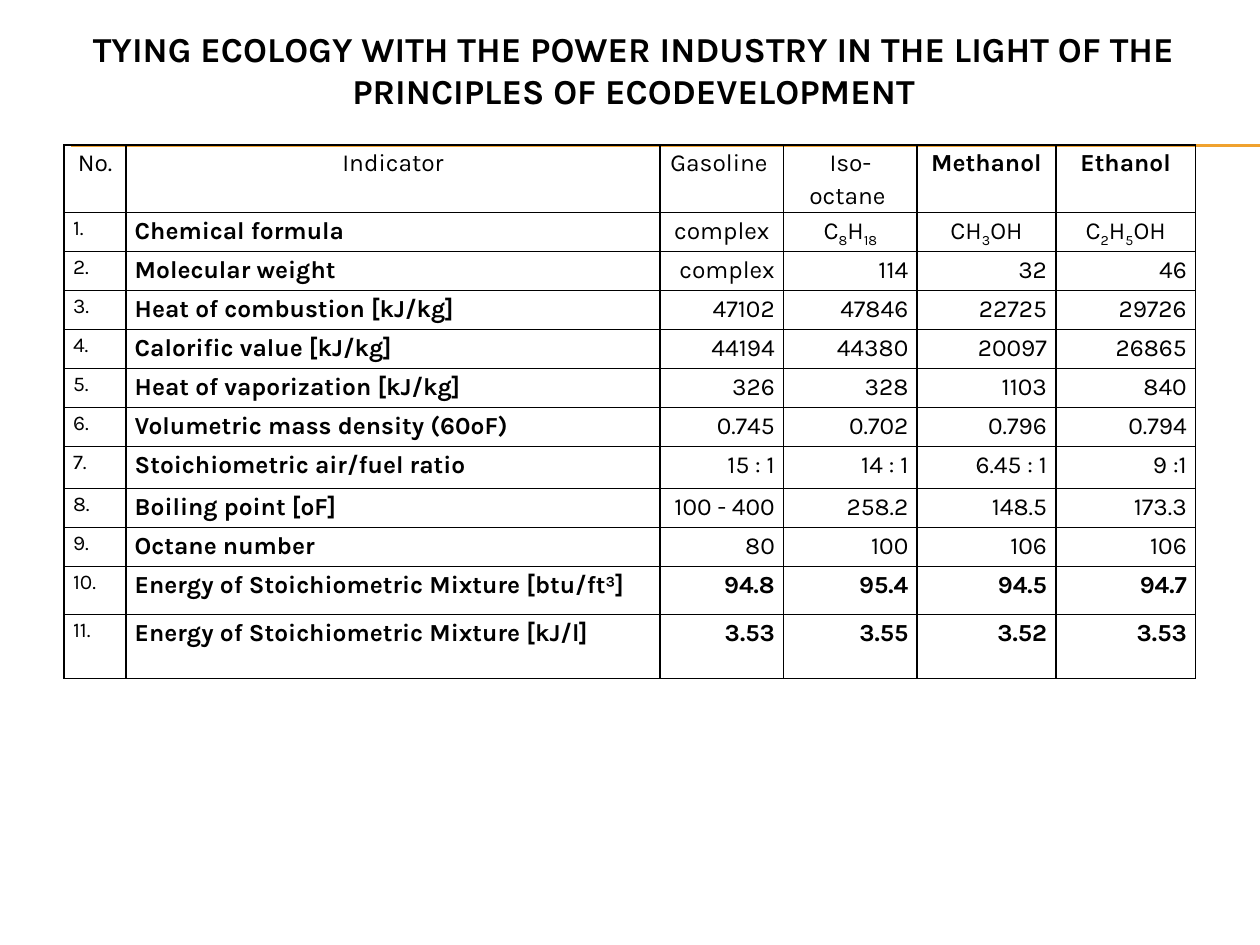
from dataclasses import dataclass
from itertools import groupby

from lxml.etree import SubElement
from pptx import Presentation
from pptx.dml.color import RGBColor
from pptx.enum.shapes import MSO_CONNECTOR
from pptx.enum.text import MSO_ANCHOR, PP_ALIGN as Align
from pptx.oxml import parse_xml
from pptx.oxml.ns import nsdecls, qn
from pptx.util import Inches, Pt


@dataclass(frozen=True)
class Theme:
    font: str = "Karla"
    ink: str = "000000"
    accent: str = "F0A22E"
    title_size: int = 20
    body_size: int = 14
    number_size: int = 12
    border: int = 1
    rule: float = 0.75
    spacing: float = 1.15


THEME = Theme()

# Content
TITLE = ("TYING ECOLOGY WITH THE POWER INDUSTRY IN THE LIGHT OF THE "
         "PRINCIPLES OF ECODEVELOPMENT")
HEADINGS = ["No.", "Indicator", "Gasoline ", "Iso-octane ", "Methanol", "Ethanol"]
INDICATORS = [
    ("Chemical formula", "complex", "C8H18", "CH3OH", "C2H5OH"),
    ("Molecular weight", "complex", "114", "32", "46"),
    ("Heat of combustion [kJ/kg]", "47102", "47846", "22725", "29726"),
    ("Calorific value [kJ/kg]", "44194", "44380", "20097", "26865"),
    ("Heat of vaporization [kJ/kg]", "326", "328", "1103", "840"),
    ("Volumetric mass density (60ºF)", "0.745", "0.702", "0.796", "0.794"),
    ("Stoichiometric air/fuel ratio", "15 : 1", "14 : 1", "6.45 : 1", "9 :1"),
    ("Boiling point [ºF]", "100 - 400", "258.2", "148.5", "173.3"),
    ("Octane number", "80", "100", "106", "106"),
    ("Energy of Stoichiometric Mixture [btu/ft³]", "94.8", "95.4", "94.5", "94.7"),
    ("Energy of Stoichiometric Mixture [kJ/l]", "3.53", "3.55", "3.52", "3.53"),
]
ALCOHOLS = {"Methanol", "Ethanol"}
FORMULA_ROW = 1
ENERGY_ROWS = {10, 11}

# Layout
COLUMN_WIDTHS = [0.49, 4.24, 0.98, 1.06, 1.1, 1.11]
ROW_HEIGHT = 0.31
ROW_HEIGHTS = {0: 0.32, 7: 0.33, 10: 0.38, 11: 0.51}
TABLE_LEFT, TABLE_TOP = 0.51, 1.15


def style_run(run, size, bold):
    font = run.font
    font.name, font.size, font.bold = THEME.font, Pt(size), bold
    font.color.rgb = RGBColor.from_string(THEME.ink)


def add_rule(slide, y):
    rule = slide.shapes.add_connector(
        MSO_CONNECTOR.STRAIGHT, Inches(0.56), Inches(y), Inches(10), Inches(y))
    rule.line.color.rgb = RGBColor.from_string(THEME.accent)
    rule.line.width = Pt(THEME.rule)
    SubElement(rule._element.spPr, qn("a:effectLst"))


def add_title(slide):
    box = slide.shapes.add_textbox(Inches(0.28), Inches(0.13), Inches(9.5), Inches(0.84))
    frame = box.text_frame
    frame.word_wrap = True
    frame.vertical_anchor = MSO_ANCHOR.MIDDLE
    frame.text = TITLE
    heading = frame.paragraphs[0]
    heading.alignment = Align.CENTER
    style_run(heading.runs[0], THEME.title_size, True)


def outline(cell):
    properties = cell._tc.get_or_add_tcPr()
    for position, side in enumerate("LRTB"):
        properties.insert(position, parse_xml(
            f'<a:ln{side} {nsdecls("a")} w="{Pt(THEME.border)}"><a:solidFill>'
            f'<a:srgbClr val="{THEME.ink}"/></a:solidFill></a:ln{side}>'))


def cell_style(row, column, text):
    """Return alignment, type size and weight for a cell."""
    if row == 0:
        return Align.CENTER, THEME.body_size, text in ALCOHOLS
    if column == 0:
        return Align.LEFT, THEME.number_size, False
    if column == 1:
        return Align.LEFT, THEME.body_size, True
    align = Align.CENTER if row == FORMULA_ROW else Align.RIGHT
    return align, THEME.body_size, row in ENERGY_ROWS


def fill_cell(cell, row, column, text):
    cell.margin_left = cell.margin_right = Inches(0.07)
    cell.margin_top = cell.margin_bottom = 0
    cell.fill.background()
    outline(cell)

    align, size, bold = cell_style(row, column, text)
    paragraph = cell.text_frame.paragraphs[0]
    paragraph.alignment, paragraph.line_spacing = align, THEME.spacing

    # Digits in a chemical formula are subscripts
    if row == FORMULA_ROW and column > 1:
        parts = [("".join(chars), low) for low, chars in groupby(text, str.isdigit)]
    else:
        parts = [(text, False)]
    for part, subscript in parts:
        run = paragraph.add_run()
        run.text = part
        style_run(run, size, bold)
        if subscript:
            run.font._element.set("baseline", "-25000")


def add_fuel_table(slide):
    rows = [HEADINGS] + [(f"{n}.", *item) for n, item in enumerate(INDICATORS, 1)]
    heights = [ROW_HEIGHTS.get(n, ROW_HEIGHT) for n in range(len(rows))]
    fuels = slide.shapes.add_table(
        len(rows), len(HEADINGS), Inches(TABLE_LEFT), Inches(TABLE_TOP),
        Inches(sum(COLUMN_WIDTHS)), Inches(sum(heights))).table
    fuels.first_row = fuels.horz_banding = False
    for column, width in zip(fuels.columns, COLUMN_WIDTHS):
        column.width = Inches(width)
    for r, (texts, height) in enumerate(zip(rows, heights)):
        fuels.rows[r].height = Inches(height)
        for c, text in enumerate(texts):
            fill_cell(fuels.cell(r, c), r, c, text)


def main():
    deck = Presentation()
    deck.slide_width, deck.slide_height = Inches(10), Inches(7.5)
    slide = deck.slides.add_slide(deck.slide_layouts[6])
    for y in (1.15, 1.16):
        add_rule(slide, y)
    add_title(slide)
    add_fuel_table(slide)
    deck.save("out.pptx")


if __name__ == "__main__":
    main()
